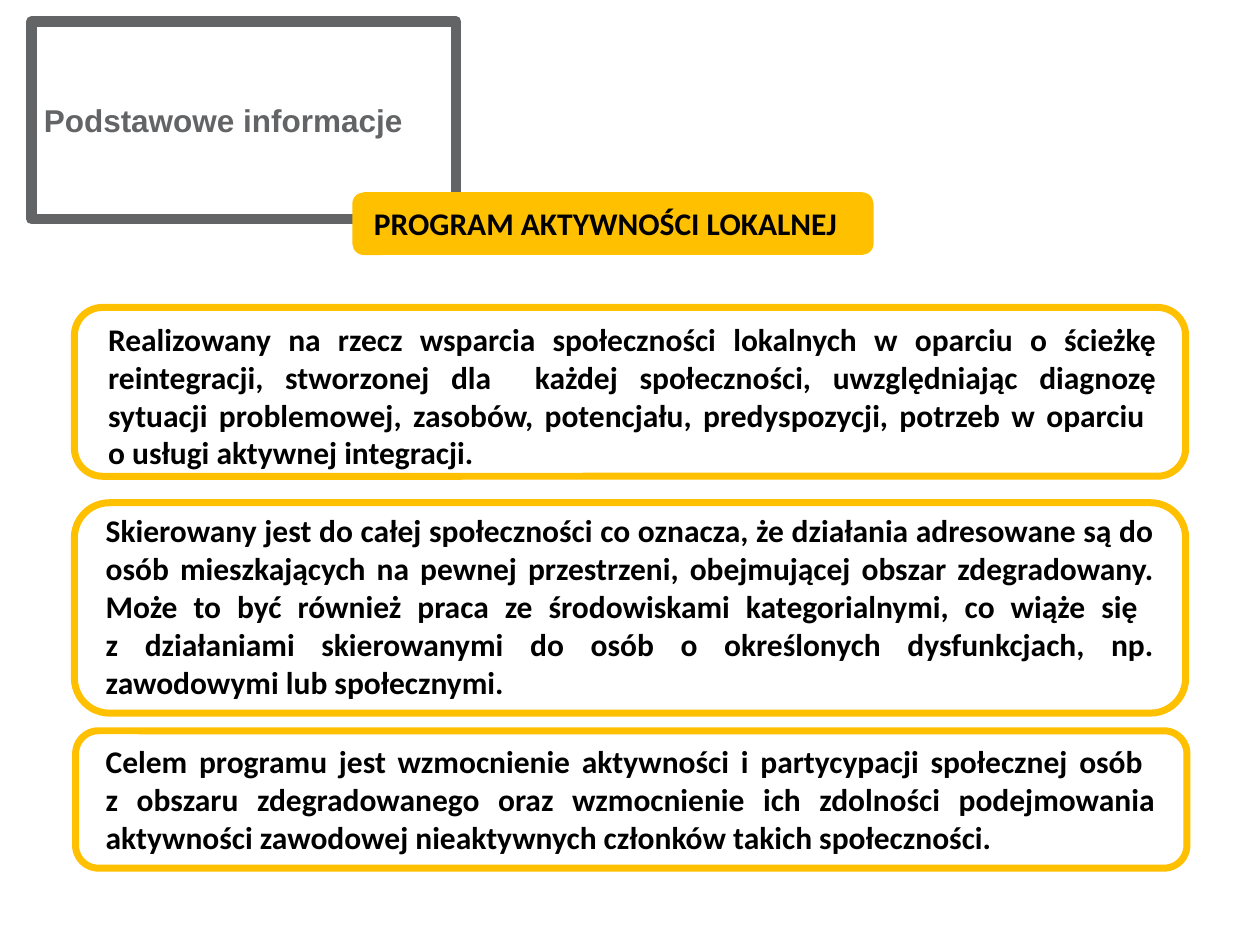
from dataclasses import dataclass

from pptx import Presentation
from pptx.dml.color import RGBColor
from pptx.enum.shapes import MSO_SHAPE as Shape
from pptx.enum.text import MSO_ANCHOR as Anchor, PP_ALIGN as Align
from pptx.util import Inches, Pt


@dataclass(frozen=True)
class Theme:
    gray: RGBColor = RGBColor(0x63, 0x64, 0x66)
    amber: RGBColor = RGBColor(0xFF, 0xC0, 0x00)
    black: RGBColor = RGBColor(0, 0, 0)
    heading_font: str = "Arial"
    body_font: str = "Calibri"
    size: Pt = Pt(18)


THEME = Theme()

STATEMENTS = [
    ((0.59, 2.44, 8.82, 1.34), (0.17, 0.05, 8.52, 1.31),
     "Realizowany na rzecz wsparcia społeczności lokalnych w oparciu o ścieżkę "
     "reintegracji, stworzonej dla  każdej społeczności, uwzględniając diagnozę "
     "sytuacji problemowej, zasobów, potencjału, predyspozycji, potrzeb w oparciu \n"
     "o usługi aktywnej integracji."),
    ((0.59, 3.99, 8.82, 1.67), (0.15, 0.02, 8.52, 1.62),
     "Skierowany jest do całej społeczności co oznacza, że działania adresowane są do "
     "osób mieszkających na pewnej przestrzeni, obejmującej obszar zdegradowany. "
     "Może to być również praca ze środowiskami kategorialnymi, co wiąże się \n"
     "z działaniami skierowanymi do osób o określonych dysfunkcjach, np. "
     "zawodowymi lub społecznymi."),
    ((0.6, 5.8, 8.82, 1.09), (0.14, 0.04, 8.53, 1.01),
     "Celem programu jest wzmocnienie aktywności i partycypacji społecznej osób \n"
     "z obszaru zdegradowanego oraz wzmocnienie ich zdolności podejmowania "
     "aktywności zawodowej nieaktywnych członków takich społeczności."),
]


def to_inches(box):
    return [Inches(length) for length in box]


def add_frame(slide, kind, box, color, width, filled=False):
    frame = slide.shapes.add_shape(kind, *to_inches(box))
    frame.shadow.inherit = False
    if filled:
        frame.fill.solid()
        frame.fill.fore_color.rgb = color
    else:
        frame.fill.background()
    frame.line.color.rgb = color
    frame.line.width = Pt(width)
    return frame


def write(holder, text, font_name, color, align=Align.LEFT):
    holder.text_frame.word_wrap = True
    paragraph = holder.text_frame.paragraphs[0]
    paragraph.text = text
    paragraph.alignment = align
    paragraph.font.name = font_name
    paragraph.font.size = THEME.size
    paragraph.font.bold = True
    paragraph.font.color.rgb = color


def add_heading(slide, box):
    heading = add_frame(slide, Shape.RECTANGLE, box, THEME.gray, 6)
    heading.text_frame.vertical_anchor = Anchor.MIDDLE
    write(heading, "Podstawowe informacje", THEME.heading_font, THEME.gray)


def add_program_banner(slide, box):
    left, top, _, _ = box
    add_frame(slide, Shape.ROUNDED_RECTANGLE, box, THEME.amber, 2, filled=True)
    label = slide.shapes.add_textbox(*to_inches((left + 0.06, top + 0.03, 3.94, 0.4)))
    write(label, "PROGRAM AKTYWNOŚCI LOKALNEJ", THEME.body_font, THEME.black)


def add_statement(slide, box, text_area, text):
    left, top, _, _ = box
    indent, drop, width, height = text_area
    add_frame(slide, Shape.ROUNDED_RECTANGLE, box, THEME.amber, 4)
    statement = slide.shapes.add_textbox(
        *to_inches((left + indent, top + drop, width, height)))
    write(statement, text, THEME.body_font, THEME.black, Align.JUSTIFY)


def main():
    deck = Presentation()
    deck.slide_width, deck.slide_height = Inches(10), Inches(7.5)
    slide = deck.slides.add_slide(deck.slide_layouts[6])
    add_heading(slide, (0.25, 0.17, 3.37, 1.57))
    add_program_banner(slide, (2.81, 1.54, 4.11, 0.47))
    for box, text_area, text in STATEMENTS:
        add_statement(slide, box, text_area, text)
    deck.save("out.pptx")


if __name__ == "__main__":
    main()
